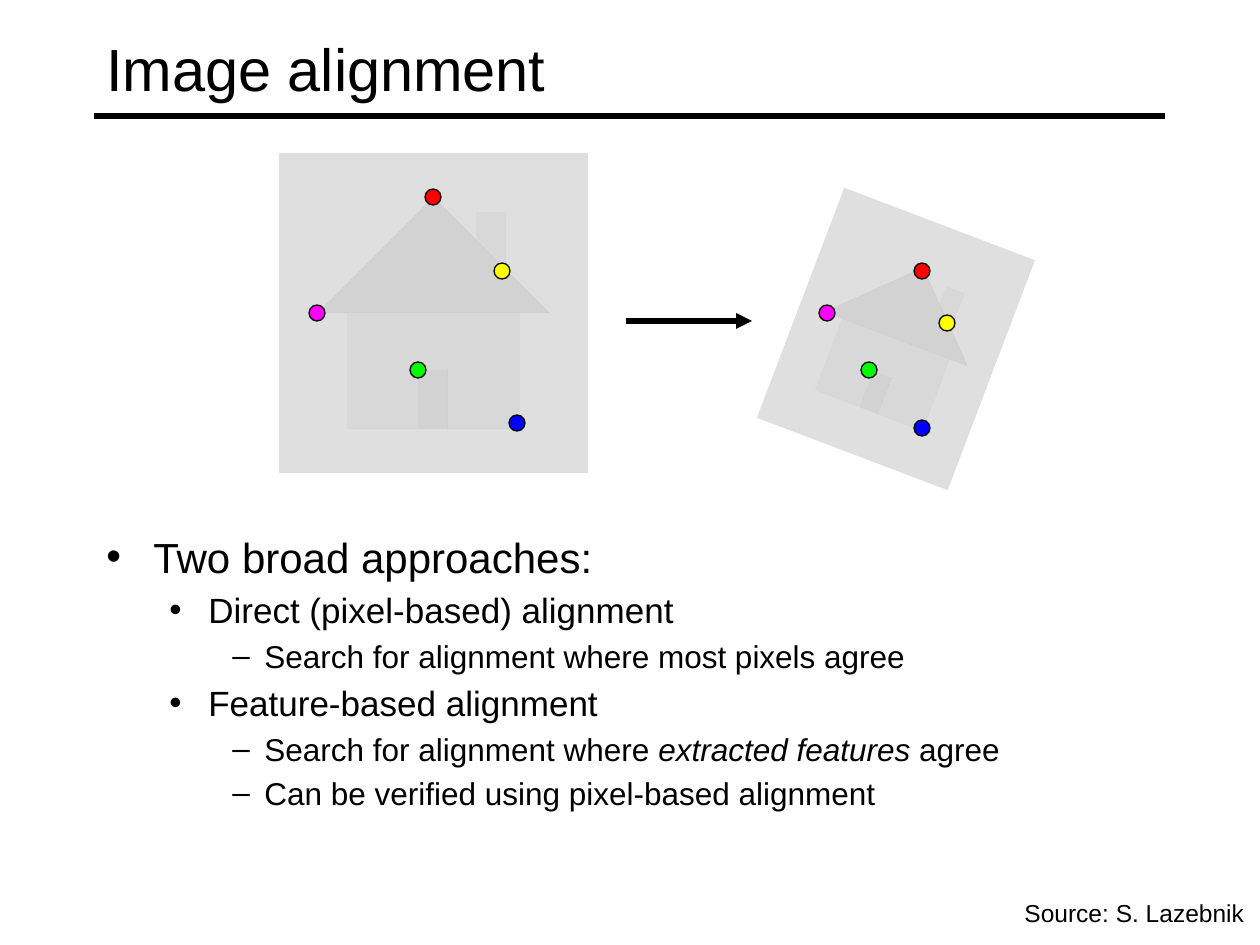
from lxml.etree import SubElement
from pptx import Presentation
from pptx.dml.color import RGBColor
from pptx.enum.shapes import MSO_CONNECTOR as Connector, MSO_SHAPE as Shape
from pptx.enum.text import MSO_ANCHOR as Anchor, MSO_AUTO_SIZE as AutoSize
from pptx.oxml.ns import qn
from pptx.util import Pt

EMU_PER_PX = 914400 / 126
BLACK = "000000"
DOT_SIZE = 16
DOT_COLORS = ["FF0000", "0000FF", "00FF00", "FF00FF", "FFFF00"]

# level: (text indent px, hanging px, bullet, size pt)
LEVELS = [(47, 47, "•", 24), (102, 39, "•", 20), (158, 32, "–", 18)]
APPROACHES = [
    (0, ["Two broad approaches:"]),
    (1, ["Direct (pixel-based) alignment"]),
    (2, ["Search for alignment where most pixels agree"]),
    (1, ["Feature-based alignment"]),
    (2, ["Search for alignment where ", "extracted features", " agree"]),
    (2, ["Can be verified using pixel-based alignment"]),
]


def px(length):
    return round(length * EMU_PER_PX)


def color(hex_string):
    return RGBColor.from_string(hex_string)


def style_font(font, size):
    font.name = "Arial"
    font.size = Pt(size)
    font.color.rgb = color(BLACK)


def add_filled(slide, preset, box, fill):
    shape = slide.shapes.add_shape(preset, *map(px, box))
    shape.shadow.inherit = False
    shape.fill.solid()
    shape.fill.fore_color.rgb = color(fill)
    return shape


def add_rule(slide, start, end):
    """Draw a thick black line and return its a:ln element."""
    rule = slide.shapes.add_connector(Connector.STRAIGHT, *map(px, start + end))
    rule.line.color.rgb = color(BLACK)
    rule.line.width = Pt(3)
    properties = rule.line._get_or_add_ln().getparent()
    SubElement(properties, qn("a:effectLst"))
    return rule.line._get_or_add_ln()


def add_arrow(slide, start, end):
    SubElement(add_rule(slide, start, end), qn("a:tailEnd"), type="triangle")


def add_label(slide, box, text, size):
    label = slide.shapes.add_textbox(*map(px, box))
    label.text_frame.text = text
    style_font(label.text_frame.paragraphs[0].runs[0].font, size)
    return label.text_frame


def add_title(slide, box, text):
    left, top, width, height = box
    frame = add_label(slide, box, text, 34)
    frame.word_wrap = True
    frame.vertical_anchor = Anchor.MIDDLE
    baseline = top + height - 10
    add_rule(slide, (left, baseline), (left + width, baseline))


def add_house(slide, box, dots, rotation=0):
    """Draw a translucent house with feature dots centred at offsets from the box."""
    left, top = box[:2]
    house = add_filled(slide, Shape.ACTION_BUTTON_HOME, box, "808080")
    house.line.fill.background()
    house.rotation = rotation
    fill_color = house.fill._xPr.find(qn("a:solidFill"))[0]
    SubElement(fill_color, qn("a:alpha"), val="25000")
    for (x, y), fill in zip(dots, DOT_COLORS):
        corner = (left + x - DOT_SIZE / 2, top + y - DOT_SIZE / 2)
        dot = add_filled(slide, Shape.OVAL, corner + (DOT_SIZE, DOT_SIZE), fill)
        dot.line.color.rgb = color(BLACK)
        dot.line.width = Pt(0.75)


def format_bullet(paragraph, level):
    indent, hanging, bullet, size = LEVELS[level]
    paragraph.level = level
    properties = paragraph._p.get_or_add_pPr()
    properties.set("marL", str(px(indent)))
    properties.set("indent", str(-px(hanging)))
    before = SubElement(properties, qn("a:spcBef"))
    SubElement(before, qn("a:spcPct"), val="20000")
    SubElement(properties, qn("a:buFont"), typeface="Arial")
    SubElement(properties, qn("a:buChar"), char=bullet)
    for run in paragraph.runs:
        style_font(run.font, size)


def add_outline(slide, box, items):
    frame = slide.shapes.add_textbox(*map(px, box)).text_frame
    frame.word_wrap = True
    for number, (level, parts) in enumerate(items):
        paragraph = frame.add_paragraph() if number else frame.paragraphs[0]
        for position, part in enumerate(parts):
            run = paragraph.add_run()
            run.text = part
            if position == 1:
                run.font.italic = True
        format_bullet(paragraph, level)


def add_source(slide, box, text):
    frame = add_label(slide, box, text, 14)
    frame.word_wrap = False
    frame.auto_size = AutoSize.SHAPE_TO_FIT_TEXT


def main():
    deck = Presentation()
    deck.slide_width, deck.slide_height = px(1260), px(945)
    slide = deck.slides.add_slide(deck.slide_layouts[6])

    add_title(slide, (94, 10, 1071, 116), "Image alignment")
    add_outline(slide, (94, 525, 1071, 420), APPROACHES)
    add_arrow(slide, (626, 321), (752, 321))
    add_house(slide, (279, 153, 309, 320),
              [(154, 44), (238, 270), (139, 217), (38, 160), (223, 118)])
    add_house(slide, (794, 216, 204, 246),
              [(128, 55), (128, 212), (75, 154), (33, 97), (153, 107)],
              rotation=20.8)
    add_source(slide, (1012, 892, 246, 43), "Source: S. Lazebnik")
    deck.save("out.pptx")


if __name__ == "__main__":
    main()
